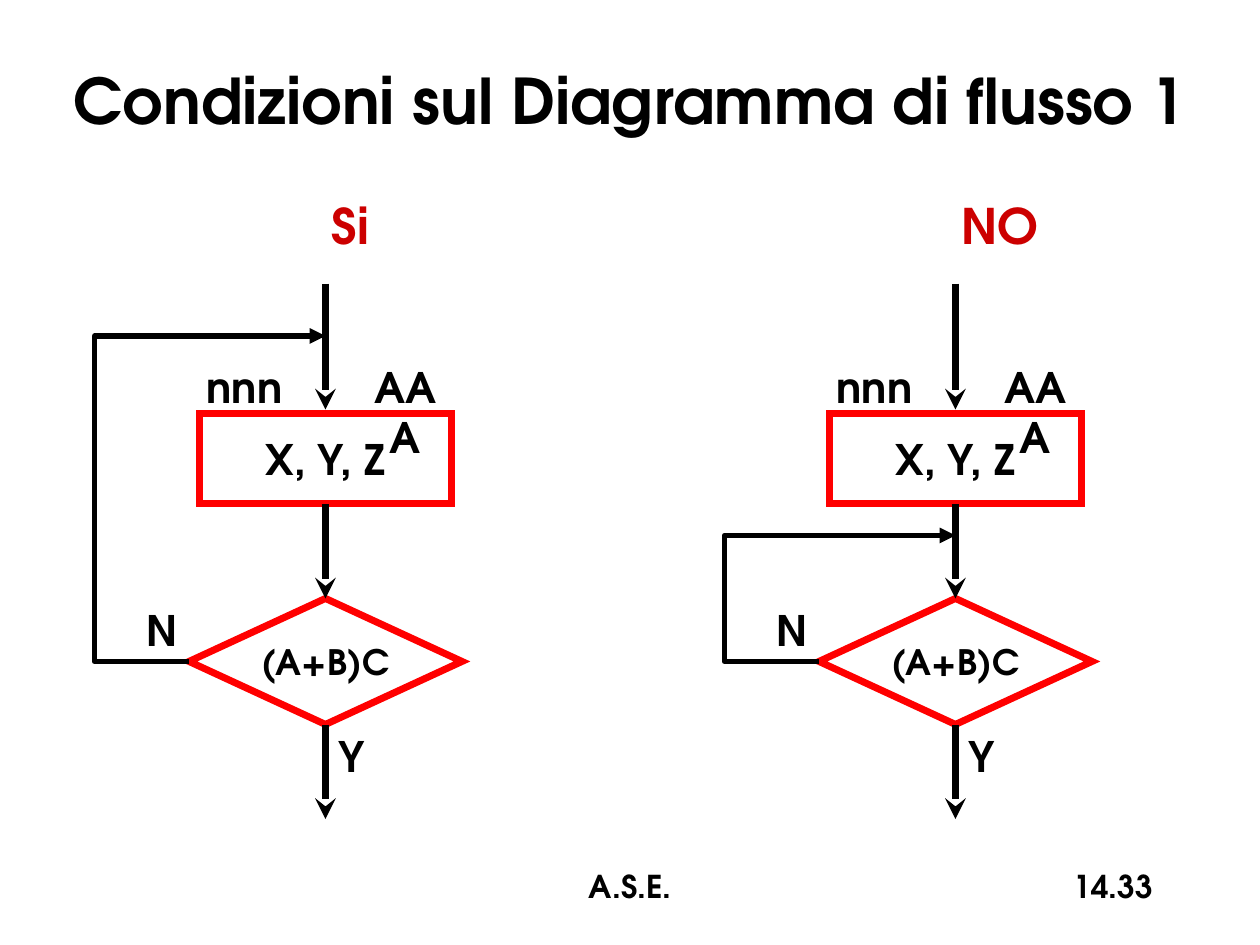
from dataclasses import dataclass

from lxml.etree import SubElement
from pptx import Presentation
from pptx.dml.color import RGBColor
from pptx.enum.shapes import MSO_CONNECTOR as Connector, MSO_SHAPE as Preset
from pptx.enum.text import MSO_ANCHOR as Anchor, MSO_AUTO_SIZE as AutoSize, PP_ALIGN as Align
from pptx.oxml.ns import qn
from pptx.util import Inches, Pt

BLACK = RGBColor(0x00, 0x00, 0x00)
RED = RGBColor(0xFF, 0x00, 0x00)
DARK_RED = RGBColor(0xCC, 0x00, 0x00)
FONT = "TeX Gyre Adventor"
COLUMNS, ROWS = 120, 90
CELL = Inches(10) // COLUMNS


@dataclass(frozen=True)
class Area:
    column: float
    row: float
    columns: float
    rows: float

    def shifted(self, offset: float) -> "Area":
        return Area(self.column + offset, self.row, self.columns, self.rows)

    def frame(self) -> dict:
        values = (self.column, self.row, self.columns, self.rows)
        return dict(zip(("left", "top", "width", "height"), map(grid, values)))


@dataclass(frozen=True)
class Label:
    text: str
    area: Area
    size: int = 24
    align: Align = Align.CENTER
    wrap: bool = False
    color: RGBColor = BLACK


@dataclass(frozen=True)
class Block:
    preset: Preset
    label: Label


@dataclass(frozen=True)
class Flow:
    heading: str
    placeholder: int
    offset: float
    return_row: float


BLOCKS = (
    Block(Preset.RECTANGLE, Label("X, Y, Z", Area(19, 39.4, 24, 8.6))),
    Block(Preset.DIAMOND, Label("(A+B)C", Area(18, 57, 26, 12), 20)),
)
LABELS = (
    Label("nnn", Area(18.5, 33.8, 9.7, 6), align=Align.LEFT),
    Label("AAA", Area(33.2, 33.8, 10.8, 6), wrap=True),
    Label("Y", Area(31, 69, 4.9, 6)),
    Label("N", Area(12.7, 57, 5.4, 6)),
)
FOOTERS = (
    Label("14.33", Area(86, 82, 25, 6), 18, Align.RIGHT, True),
    Label("A.S.E.", Area(41, 82, 38, 6), 18, Align.CENTER, True),
)
AXIS, LOOP_LEFT, DIAMOND_LEFT, DIAMOND_MIDDLE = 31, 9, 18, 63
ARROW_ROWS = ((27, 39), (48, 57), (69, 78))
HEADING_AREA = Area(2, 18, 56, 62)
HEADING_INDENT = 28.4
FLOWS = (Flow("Si", 1, 0, 32), Flow("NO", 2, 60, 51))


def grid(cells: float) -> int:
    return round(cells * CELL)


def apply(target, values: dict) -> None:
    for name, value in values.items():
        setattr(target, name, value)


def style_line(shape, color: RGBColor, width: float, ending: str, **attributes) -> None:
    shape.line.color.rgb = color
    shape.line.width = Pt(width)
    SubElement(shape.line._get_or_add_ln(), qn(ending), **attributes)


def write(shape, label: Label, anchor: Anchor = Anchor.TOP) -> None:
    apply(shape.text_frame, {"word_wrap": label.wrap, "vertical_anchor": anchor,
                             "auto_size": AutoSize.NONE})
    para = shape.text_frame.paragraphs[0]
    para.alignment = label.align
    span = para.add_run()
    span.text = label.text
    apply(span.font, {"name": FONT, "size": Pt(label.size), "bold": True})
    span.font.color.rgb = label.color


def draw_label(page, label: Label, offset: float = 0) -> None:
    box = page.shapes.add_textbox(**label.area.shifted(offset).frame())
    write(box, label)


def draw_block(page, block: Block, offset: float) -> None:
    area = block.label.area.shifted(offset)
    shape = page.shapes.add_shape(block.preset, **area.frame())
    shape.shadow.inherit = False
    shape.fill.background()
    style_line(shape, RED, 4, "a:miter", lim="800000")
    write(shape, block.label, Anchor.MIDDLE)


def draw_arrow(page, column: float, start: float, end: float) -> None:
    arrow = page.shapes.add_connector(
        Connector.STRAIGHT, grid(column), grid(start), grid(column), grid(end))
    style_line(arrow, BLACK, 4, "a:tailEnd", type="stealth")
    SubElement(arrow._element.spPr, qn("a:effectLst"))


def draw_return(page, flow: Flow) -> None:
    corners = ((LOOP_LEFT, DIAMOND_MIDDLE), (LOOP_LEFT, flow.return_row), (AXIS, flow.return_row))
    builder = page.shapes.build_freeform(grid(DIAMOND_LEFT + flow.offset), grid(DIAMOND_MIDDLE))
    points = [(grid(column + flow.offset), grid(row)) for column, row in corners]
    builder.add_line_segments(points, close=False)
    loop = builder.convert_to_shape()
    loop.shadow.inherit = False
    loop.fill.background()
    style_line(loop, BLACK, 3, "a:tailEnd", type="triangle")


def fill_title(page) -> None:
    title = page.shapes.title
    label = Label("Condizioni sul Diagramma di flusso 1", Area(2, 2, 116, 15), 36, wrap=True)
    apply(title, label.area.frame())
    write(title, label, Anchor.MIDDLE)


def fill_heading(page, flow: Flow) -> None:
    body = page.placeholders[flow.placeholder]
    area = HEADING_AREA.shifted(flow.offset)
    apply(body, area.frame())
    write(body, Label(flow.heading, area, 28, Align.LEFT, True, DARK_RED))
    properties = body.text_frame.paragraphs[0]._p.get_or_add_pPr()
    properties.set("marL", str(grid(HEADING_INDENT)))
    properties.set("indent", "0")
    SubElement(properties, qn("a:buNone"))


def draw_flow(page, flow: Flow) -> None:
    fill_heading(page, flow)
    for block in BLOCKS:
        draw_block(page, block, flow.offset)
    for start, end in ARROW_ROWS:
        draw_arrow(page, AXIS + flow.offset, start, end)
    draw_return(page, flow)
    for label in LABELS:
        draw_label(page, label, flow.offset)


def main() -> None:
    deck = Presentation()
    apply(deck, {"slide_width": grid(COLUMNS), "slide_height": grid(ROWS)})
    page = deck.slides.add_slide(deck.slide_layouts[3])
    fill_title(page)
    for flow in FLOWS:
        draw_flow(page, flow)
    for footer in FOOTERS:
        draw_label(page, footer)
    deck.save("out.pptx")


if __name__ == "__main__":
    main()
